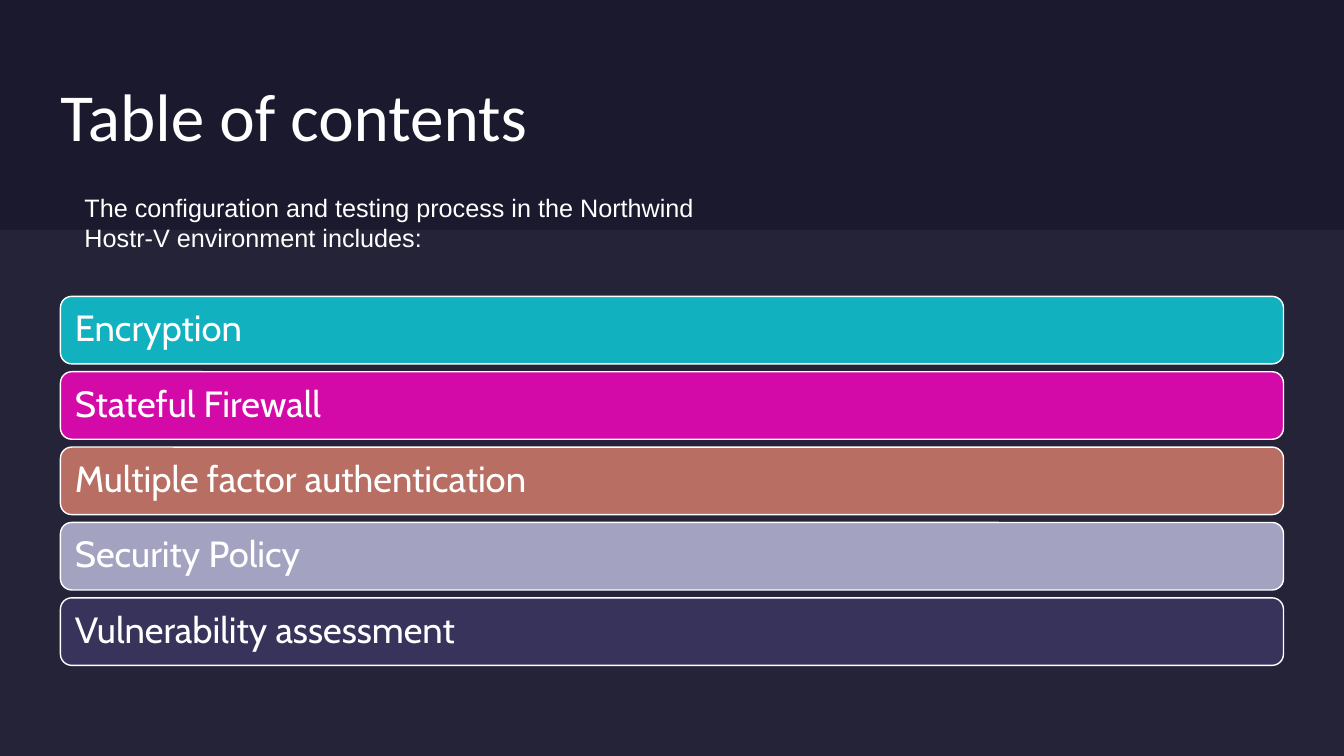
from dataclasses import dataclass

from lxml.etree import SubElement
from pptx import Presentation
from pptx.dml.color import RGBColor
from pptx.enum.shapes import MSO_SHAPE
from pptx.enum.text import MSO_ANCHOR, PP_ALIGN
from pptx.oxml.ns import qn
from pptx.slide import Slide
from pptx.util import Inches, Pt

WIDTH, HEIGHT = Inches(13.333), Inches(7.5)
GRID = 100  # columns and rows on the slide

TOPICS = [
    ("Encryption", "12B1BF"),
    ("Stateful Firewall", "D40AA8"),
    ("Multiple factor authentication", "B86E62"),
    ("Security Policy", "A3A3C1"),
    ("Vulnerability assessment", "37335B"),
]
MARGIN = 4.5
FIRST_BAR, BAR_HEIGHT, BAR_PITCH = 39.2, 8.93, 9.97


def color(hex_code):
    return RGBColor.from_string(hex_code)


def write(frame, text, font, size, ink="FFFFFF", anchor=MSO_ANCHOR.TOP,
          insets=(0.1, 0.05), line_spacing=None):
    """Fill a text frame; insets are horizontal and vertical inches."""
    frame.word_wrap = True
    frame.vertical_anchor = anchor
    frame.margin_left = frame.margin_right = Inches(insets[0])
    frame.margin_top = frame.margin_bottom = Inches(insets[1])
    paragraph = frame.paragraphs[0]
    paragraph.alignment = PP_ALIGN.LEFT
    paragraph.line_spacing = line_spacing
    run = paragraph.add_run()
    run.text = text
    run.font.name = font
    run.font.size = Pt(size)
    run.font.color.rgb = color(ink)


@dataclass
class ContentsSlide:
    slide: Slide
    background: str = "1B192E"
    tint: str = "E4E3F0"
    outline: str = "FFFFFF"
    title_font: str = "Calibri"
    intro_font: str = "Arial"
    topic_font: str = "Cabin"

    def place(self, column, row, columns, rows):
        """Turn grid units into left, top, width and height."""
        return (round(WIDTH * column / GRID), round(HEIGHT * row / GRID),
                round(WIDTH * columns / GRID), round(HEIGHT * rows / GRID))

    def paint_background(self):
        fill = self.slide.background.fill
        fill.solid()
        fill.fore_color.rgb = color(self.background)

    def block(self, preset, area, fill):
        block = self.slide.shapes.add_shape(preset, *self.place(*area))
        block.shadow.inherit = False
        block.fill.solid()
        block.fill.fore_color.rgb = color(fill)
        block.line.fill.background()
        return block

    def veil(self, *area, opacity):
        veil = self.block(MSO_SHAPE.RECTANGLE, area, self.tint)
        tint = veil.fill._xPr.find(qn("a:solidFill"))[0]
        SubElement(tint, qn("a:alpha"), val=str(opacity * 1000))

    def text(self, words, *area, **text_format):
        box = self.slide.shapes.add_textbox(*self.place(*area))
        write(box.text_frame, words, **text_format)

    def topic_bar(self, topic, fill, row):
        area = (MARGIN, row, GRID - 2 * MARGIN, BAR_HEIGHT)
        bar = self.block(MSO_SHAPE.ROUNDED_RECTANGLE, area, fill)
        bar.line.color.rgb = color(self.outline)
        bar.line.width = Pt(1)
        write(bar.text_frame, topic, font=self.topic_font, size=26,
              anchor=MSO_ANCHOR.MIDDLE, insets=(0.11, 0.11), line_spacing=0.9)


def main():
    deck = Presentation()
    deck.slide_width, deck.slide_height = WIDTH, HEIGHT
    contents = ContentsSlide(deck.slides.add_slide(deck.slide_layouts[6]))

    contents.paint_background()
    contents.text("Table of contents", MARGIN, 8, 59.93, 14.4,
                  font=contents.title_font, size=48,
                  anchor=MSO_ANCHOR.MIDDLE, insets=(0, 0))
    contents.veil(0, 30.4, GRID, GRID - 30.4, opacity=5)
    for index, (topic, fill) in enumerate(TOPICS):
        contents.topic_bar(topic, fill, FIRST_BAR + index * BAR_PITCH)
    contents.text("The configuration and testing process in the Northwind "
                  "Hostr-V environment includes:", 5.55, 24.8, 49.2, 13.47,
                  font=contents.intro_font, size=18)

    deck.save("out.pptx")


if __name__ == "__main__":
    main()
